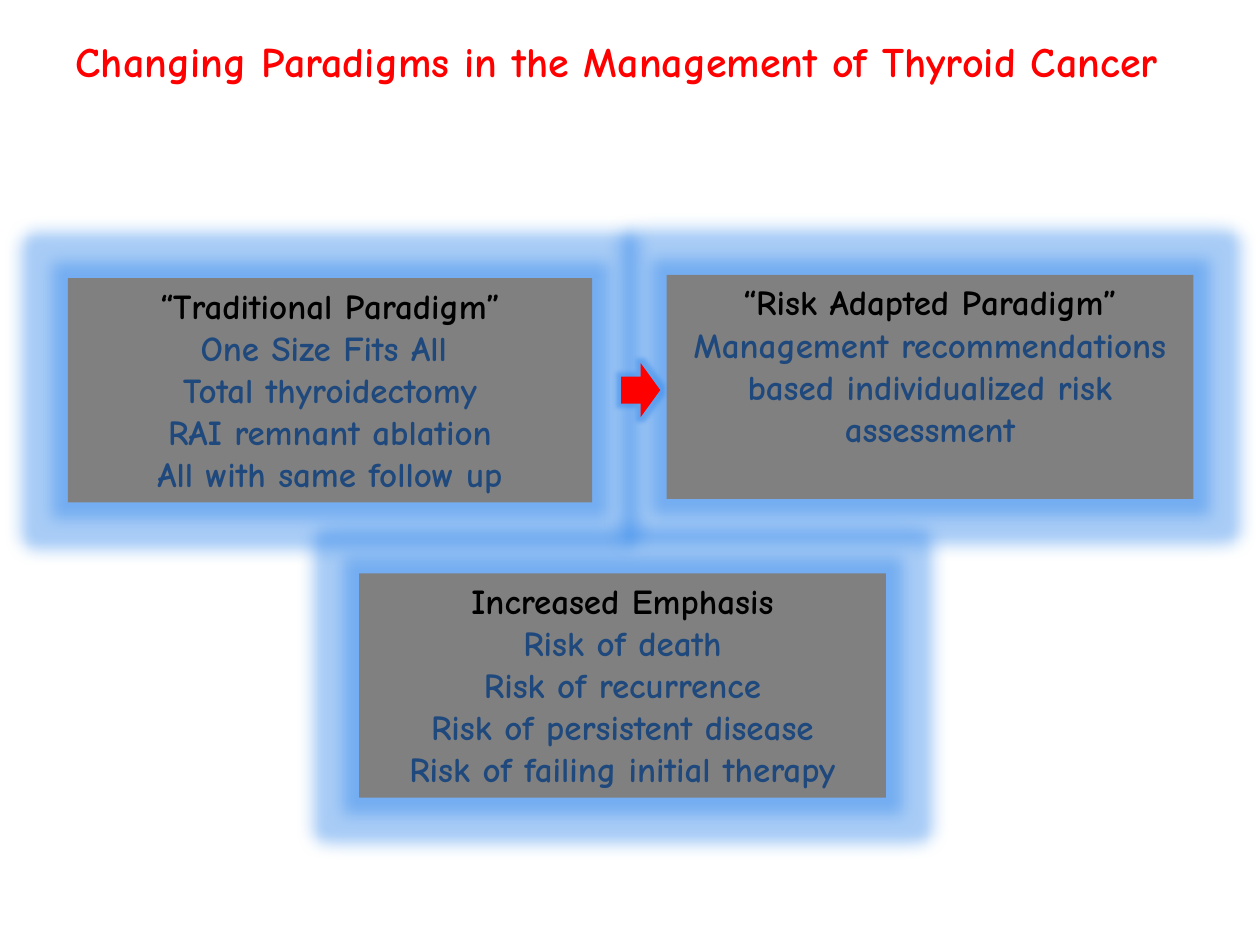
"""Build the slide on changing paradigms in thyroid cancer management."""
from dataclasses import dataclass

from lxml import etree
from pptx import Presentation
from pptx.dml.color import RGBColor
from pptx.enum.shapes import MSO_SHAPE
from pptx.enum.text import MSO_ANCHOR, PP_ALIGN
from pptx.oxml.ns import qn
from pptx.util import Cm, Pt

RECTANGLE = MSO_SHAPE.RECTANGLE
RIGHT_ARROW = MSO_SHAPE.RIGHT_ARROW
TOP = MSO_ANCHOR.TOP
MIDDLE = MSO_ANCHOR.MIDDLE
CENTER = PP_ALIGN.CENTER

FONT = "Comic Neue"
RED, GRAY, BLACK, NAVY, GLOW = "FF0000", "808080", "000000", "1F497D", "2680EA"
PANEL_HEIGHT = 4.52
PANEL_GLOW, ARROW_GLOW = 18, 5


@dataclass(frozen=True)
class Panel:
    left: float
    top: float
    width: float
    heading: str
    points: tuple[str, ...]


PANELS = (
    Panel(7.24, 11.56, 10.62, "Increased Emphasis",
          ("Risk of death", "Risk of recurrence", "Risk of persistent disease",
           "Risk of failing initial therapy")),
    Panel(1.37, 5.61, 10.57, "“Traditional Paradigm”",
          ("One Size Fits All ", "Total thyroidectomy", "RAI remnant ablation",
           "All with same follow up")),
    Panel(13.44, 5.54, 10.62, "“Risk Adapted Paradigm”",
          ("Management recommendations based individualized risk assessment",)),
)


def rgb(color: str) -> RGBColor:
    return RGBColor.from_string(color)


def write(paragraph, text: str, *, size: float, color: str) -> None:
    paragraph.alignment = CENTER
    run = paragraph.add_run()
    run.text = text
    run.font.name = FONT
    run.font.size = Pt(size)
    run.font.bold = True
    run.font.color.rgb = rgb(color)


def add_glowing(slide, kind, left: float, top: float, width: float,
                height: float, *, fill: str, glow: float):
    shape = slide.shapes.add_shape(kind, Cm(left), Cm(top), Cm(width), Cm(height))
    shape.fill.solid()
    shape.fill.fore_color.rgb = rgb(fill)
    shape.line.fill.background()
    shape.shadow.inherit = False
    effects = shape._element.spPr.find(qn("a:effectLst"))
    halo = etree.SubElement(effects, qn("a:glow"), rad=str(Pt(glow)))
    tint = etree.SubElement(halo, qn("a:srgbClr"), val=GLOW)
    etree.SubElement(tint, qn("a:alpha"), val="40000")
    return shape


def add_panel(slide, panel: Panel) -> None:
    box = add_glowing(slide, RECTANGLE, panel.left, panel.top, panel.width,
                      PANEL_HEIGHT, fill=GRAY, glow=PANEL_GLOW)
    frame = box.text_frame
    frame.word_wrap = True
    frame.vertical_anchor = TOP
    write(frame.paragraphs[0], panel.heading, size=20, color=BLACK)
    for point in panel.points:
        write(frame.add_paragraph(), point, size=20, color=NAVY)


def main() -> None:
    deck = Presentation()
    deck.slide_width, deck.slide_height = Cm(25.4), Cm(19.05)
    slide = deck.slides.add_slide(deck.slide_layouts[5])

    title = slide.shapes.title
    title.left, title.top = Cm(0.25), Cm(-0.36)
    title.width, title.height = Cm(24.36), Cm(3.18)
    title.text_frame.vertical_anchor = MIDDLE
    write(title.text_frame.paragraphs[0],
          "Changing Paradigms in the Management of Thyroid Cancer",
          size=24, color=RED)

    for panel in PANELS:
        add_panel(slide, panel)
    add_glowing(slide, RIGHT_ARROW, 12.52, 7.32, 0.79, 1.09,
                fill=RED, glow=ARROW_GLOW)

    deck.save("out.pptx")


if __name__ == "__main__":
    main()
